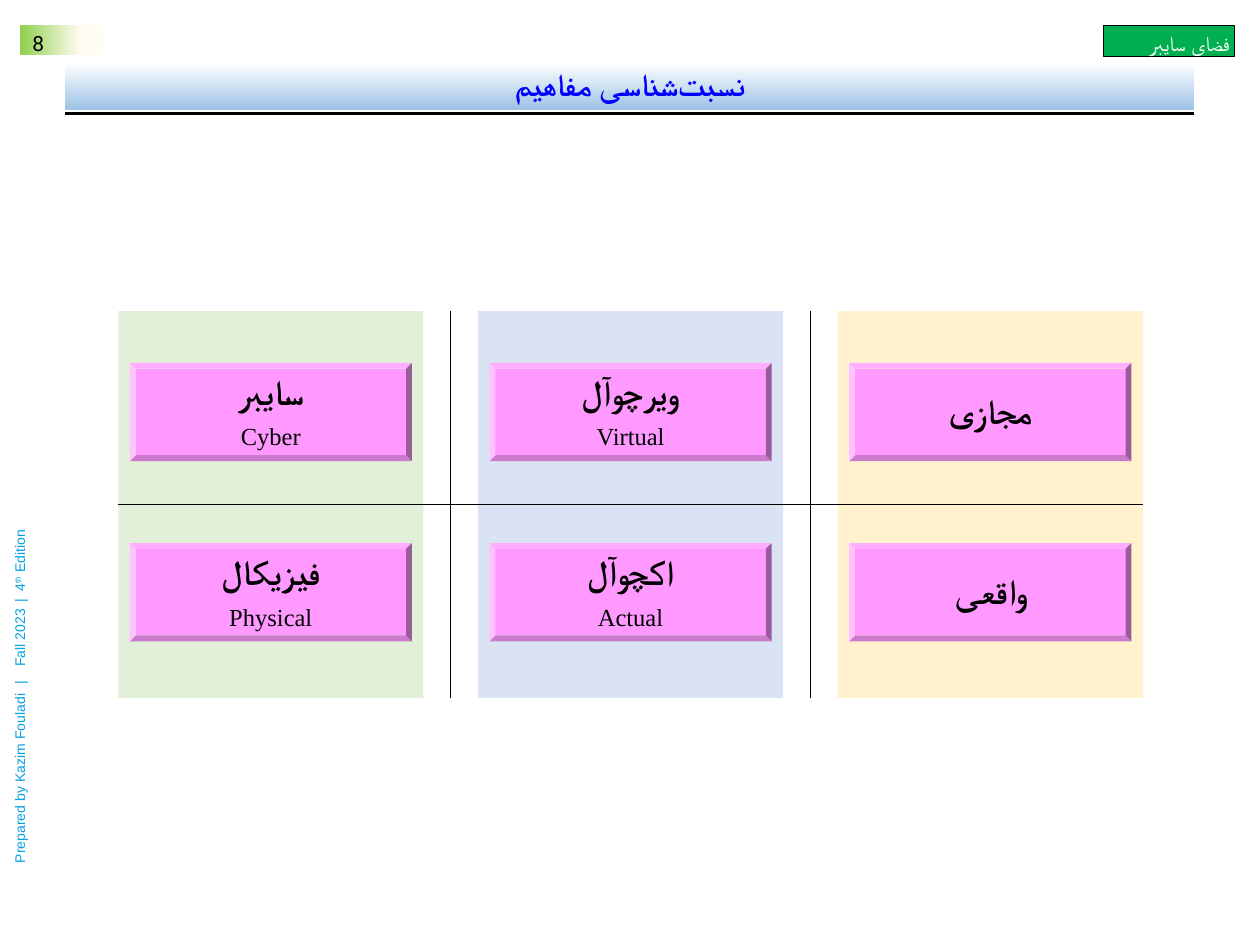
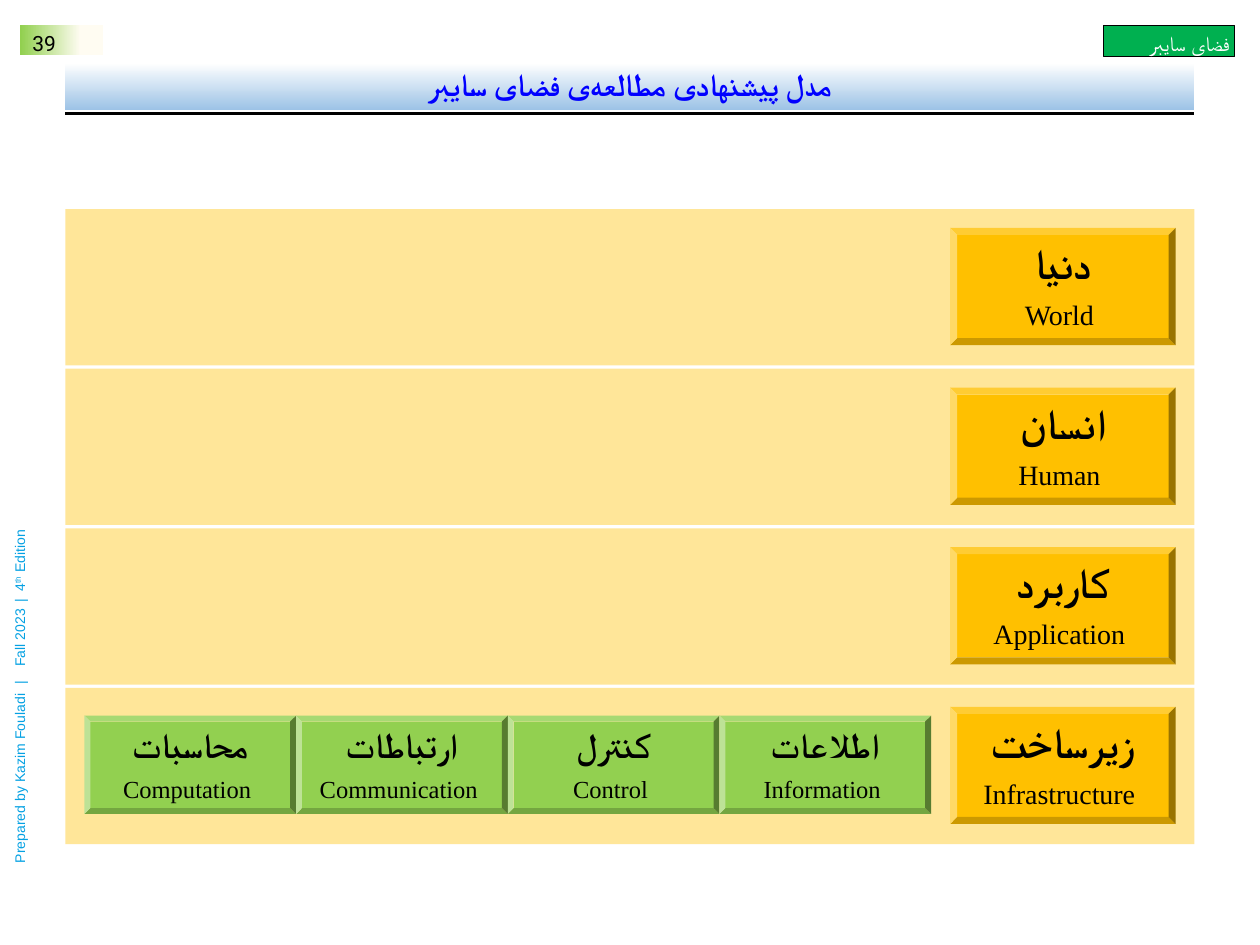
from typing import NamedTuple

from lxml.etree import SubElement
from pptx import Presentation
from pptx.dml.color import RGBColor
from pptx.enum.shapes import MSO_CONNECTOR, MSO_SHAPE
from pptx.enum.text import MSO_ANCHOR, PP_ALIGN
from pptx.oxml.ns import qn
from pptx.util import Inches, Pt

BLACK = RGBColor(0x00, 0x00, 0x00)
WHITE = RGBColor(0xFF, 0xFF, 0xFF)
TITLE_BLUE = RGBColor(0x00, 0x00, 0xFF)
BAND_BLUE = RGBColor(0x9D, 0xC3, 0xE6)
CREAM = RGBColor(0xFF, 0xFC, 0xF2)
LIGHT_GREEN = RGBColor(0x92, 0xD0, 0x50)
TAG_GREEN = RGBColor(0x00, 0xB0, 0x50)
CREDIT_BLUE = RGBColor(0x04, 0xA1, 0xE3)
PINK = RGBColor(0xFF, 0x99, 0xFF)
AMBER = RGBColor(0xFF, 0xC0, 0x00)
PALE_AMBER = RGBColor(0xFF, 0xE6, 0x99)
PALE_GREEN = RGBColor(0xE2, 0xF0, 0xD9)
PALE_BLUE = RGBColor(0xDA, 0xE3, 0xF3)
PALE_YELLOW = RGBColor(0xFF, 0xF2, 0xCC)

BODY_LEFT, BODY_WIDTH = 0.52, 8.96
HALF_SPACE = chr(0x200C)  # zero-width non-joiner of Persian spelling


class Area(NamedTuple):
    left: float
    top: float
    width: float
    height: float

    def lengths(self) -> list:
        return [Inches(value) for value in self]


class BlockStyle(NamedTuple):
    fill: RGBColor
    persian_size: int
    english_size: int
    gap: float


class Concept(NamedTuple):
    persian: str
    english: str = ""


class Column(NamedTuple):
    fill: RGBColor
    concepts: list


CONCEPT_STYLE = BlockStyle(PINK, 20, 14, 8.5)
LAYER_STYLE = BlockStyle(AMBER, 24, 16, 9.5)
PART_STYLE = BlockStyle(LIGHT_GREEN, 20, 14, 8.5)

COLUMNS = [
    Column(PALE_GREEN, [Concept("سایبر", "Cyber"), Concept("فیزیکال", "Physical")]),
    Column(PALE_BLUE, [Concept("ویرچوآل", "Virtual"), Concept("اکچوآل", "Actual")]),
    Column(PALE_YELLOW, [Concept("مجازی"), Concept("واقعی")]),
]
LAYERS = [
    Concept("دنیا", " World"),
    Concept("انسان", " Human"),
    Concept("کاربرد", " Application"),
    Concept("زیرساخت", " Infrastructure"),
]
PARTS = [
    Concept("محاسبات", " Computation"),
    Concept("ارتباطات", " Communication"),
    Concept("کنترل", " Control"),
    Concept("اطلاعات", " Information"),
]


def format_span(span, font_name: str, size: float, color: RGBColor, bold: bool = False) -> None:
    """Format a run, with the same font for complex scripts."""
    span.font.name = font_name
    span.font.size = Pt(size)
    span.font.bold = bold
    span.font.color.rgb = color
    SubElement(span.font._element, qn("a:cs")).set("typeface", font_name)


def write_line(para, text: str, font_name: str, size: float, color: RGBColor,
               align, bold: bool = False, spacing: float = 1.0, rtl: bool = False) -> None:
    para.text = text
    para.alignment = align
    para.line_spacing = spacing
    if rtl:
        para._p.get_or_add_pPr().set("rtl", "1")
    format_span(para.runs[0], font_name, size, color, bold)


def set_margins(frame, left: float, top: float, right: float, bottom: float) -> None:
    frame.margin_left, frame.margin_top = Inches(left), Inches(top)
    frame.margin_right, frame.margin_bottom = Inches(right), Inches(bottom)


def add_box(page, area: Area, fill: RGBColor | None = None, kind=MSO_SHAPE.RECTANGLE):
    box = page.shapes.add_shape(kind, *area.lengths())
    box.shadow.inherit = False
    box.line.fill.background()
    if fill is not None:
        box.fill.solid()
        box.fill.fore_color.rgb = fill
    box.text_frame.word_wrap = True
    return box


def set_gradient(box, stops: list, angle: int) -> None:
    box.fill.gradient()
    box.fill.gradient_angle = angle
    for stop, (position, color) in zip(box.fill.gradient_stops, stops):
        stop.position = position
        stop.color.rgb = color


def add_line(page, start: tuple, end: tuple, width: float):
    line = page.shapes.add_connector(
        MSO_CONNECTOR.STRAIGHT, *[Inches(value) for value in (*start, *end)])
    line.line.color.rgb = BLACK
    line.line.width = Pt(width)
    SubElement(line._element.spPr, qn("a:effectLst"))
    return line


def add_block(page, area: Area, concept: Concept, style: BlockStyle) -> None:
    """Draw a bevelled block with a Persian term and its English name."""
    block = add_box(page, area, style.fill, MSO_SHAPE.BEVEL)
    block.adjustments[0] = 0.06
    frame = block.text_frame
    frame.vertical_anchor = MSO_ANCHOR.MIDDLE
    set_margins(frame, 0.04, 0.08, 0.04, 0.04)
    write_line(frame.paragraphs[0], concept.persian, "Calibri", style.persian_size, BLACK,
               PP_ALIGN.CENTER, bold=True, spacing=0.8, rtl=True)
    if concept.english:
        para = frame.add_paragraph()
        write_line(para, concept.english, "Times New Roman", style.english_size, BLACK,
                   PP_ALIGN.CENTER, spacing=0.8, rtl=True)
        para.space_before = Pt(style.gap)


def add_credit(page) -> None:
    """Write the vertical credit line along the left edge."""
    box = page.shapes.add_textbox(*Area(-1.32, 5.35, 2.96, 0.24).lengths())
    box.rotation = 270
    box.text_frame.word_wrap = True
    para = box.text_frame.paragraphs[0]
    tabs = SubElement(para._p.get_or_add_pPr(), qn("a:tabLst"))
    for position in (1.42, 1.56, 2.07, 2.16):
        tab = SubElement(tabs, qn("a:tab"))
        tab.set("pos", str(Inches(position)))
        tab.set("algn", "l")
    for text in ("Prepared by Kazim Fouladi\t|\tFall 2023\t|\t4", "th", " Edition"):
        span = para.add_run()
        span.text = text
        format_span(span, "Arial", 8, CREDIT_BLUE)
    para.runs[1].font._element.set("baseline", "30000")


def add_page(deck, number: str, title: str):
    """Start a page with its number, tag, credit, title band and rule."""
    page = deck.slides.add_slide(deck.slide_layouts[6])
    add_line(page, (BODY_LEFT, 0.9), (BODY_LEFT + BODY_WIDTH, 0.9), 1.5)

    badge = add_box(page, Area(0.16, 0.2, 0.66, 0.24))
    set_gradient(badge, [(0.27, CREAM), (0.99, LIGHT_GREEN)], 180)
    badge.text_frame.vertical_anchor = MSO_ANCHOR.TOP
    set_margins(badge.text_frame, 0.1, 0.04, 0.1, 0)
    write_line(badge.text_frame.paragraphs[0], number, "Roboto", 12, BLACK, PP_ALIGN.LEFT)

    tag = add_box(page, Area(8.76, 0.2, 1.04, 0.25), TAG_GREEN)
    tag.line.color.rgb = BLACK
    tag.line.width = Pt(0.5)
    tag.text_frame.vertical_anchor = MSO_ANCHOR.MIDDLE
    set_margins(tag.text_frame, 0.04, 0.08, 0.04, 0.05)
    write_line(tag.text_frame.paragraphs[0], " فضای سایبر", "Arial", 12, WHITE, PP_ALIGN.RIGHT)

    add_credit(page)

    band = add_box(page, Area(BODY_LEFT, 0.5, BODY_WIDTH, 0.37))
    set_gradient(band, [(0, WHITE), (1, BAND_BLUE)], 270)
    band.text_frame.vertical_anchor = MSO_ANCHOR.MIDDLE
    write_line(band.text_frame.paragraphs[0], title, "Calibri", 18, TITLE_BLUE,
               PP_ALIGN.CENTER, bold=True, spacing=0.9, rtl=True)
    return page


def build_concepts(deck) -> None:
    page = add_page(deck, "8", HALF_SPACE.join(["نسبت", "شناسی مفاهیم"]))
    left, top, width, height = 0.94, 2.47, 2.42, 3.07
    pitch = (6.65 - left) / 2

    # Coloured columns, then the blocks on them
    panels = [add_box(page, Area(left + index * pitch, top, width, height), column.fill)
              for index, column in enumerate(COLUMNS)]
    for index, column in enumerate(COLUMNS):
        for block_top, concept in zip((2.88, 4.31), column.concepts):
            add_block(page, Area(left + index * pitch + 0.09, block_top, 2.24, 0.78),
                      concept, CONCEPT_STYLE)

    # Dividers between columns and between rows
    for index in (1, 2):
        middle = left + index * pitch - (pitch - width) / 2
        add_line(page, (middle, top), (middle, top + height), 0.5)
    row_divider = add_line(page, (left, 4.01), (9.07, 4.01), 0.5)
    row_divider.begin_connect(panels[0], 1)
    row_divider.end_connect(panels[-1], 3)


def build_model(deck) -> None:
    page = add_page(deck, "39", HALF_SPACE.join(["مدل پیشنهادی مطالعه", "ی فضای سایبر"]))
    first_top, last_top = 1.66, 5.46
    pitch = (last_top - first_top) / (len(LAYERS) - 1)

    # One band per layer, with its name at the right
    for index, layer in enumerate(LAYERS):
        top = first_top + index * pitch
        add_box(page, Area(BODY_LEFT, top, BODY_WIDTH, 1.24), PALE_AMBER)
        add_block(page, Area(7.54, top + 0.15, 1.79, 0.93), layer, LAYER_STYLE)

    # Parts of the infrastructure layer
    part_width = 1.68
    for index, part in enumerate(PARTS):
        add_block(page, Area(0.67 + index * part_width, 5.68, part_width, 0.78),
                  part, PART_STYLE)


def main() -> None:
    deck = Presentation()
    deck.slide_width, deck.slide_height = Inches(10), Inches(7.5)
    build_concepts(deck)
    build_model(deck)
    deck.save("out.pptx")


if __name__ == "__main__":
    main()
